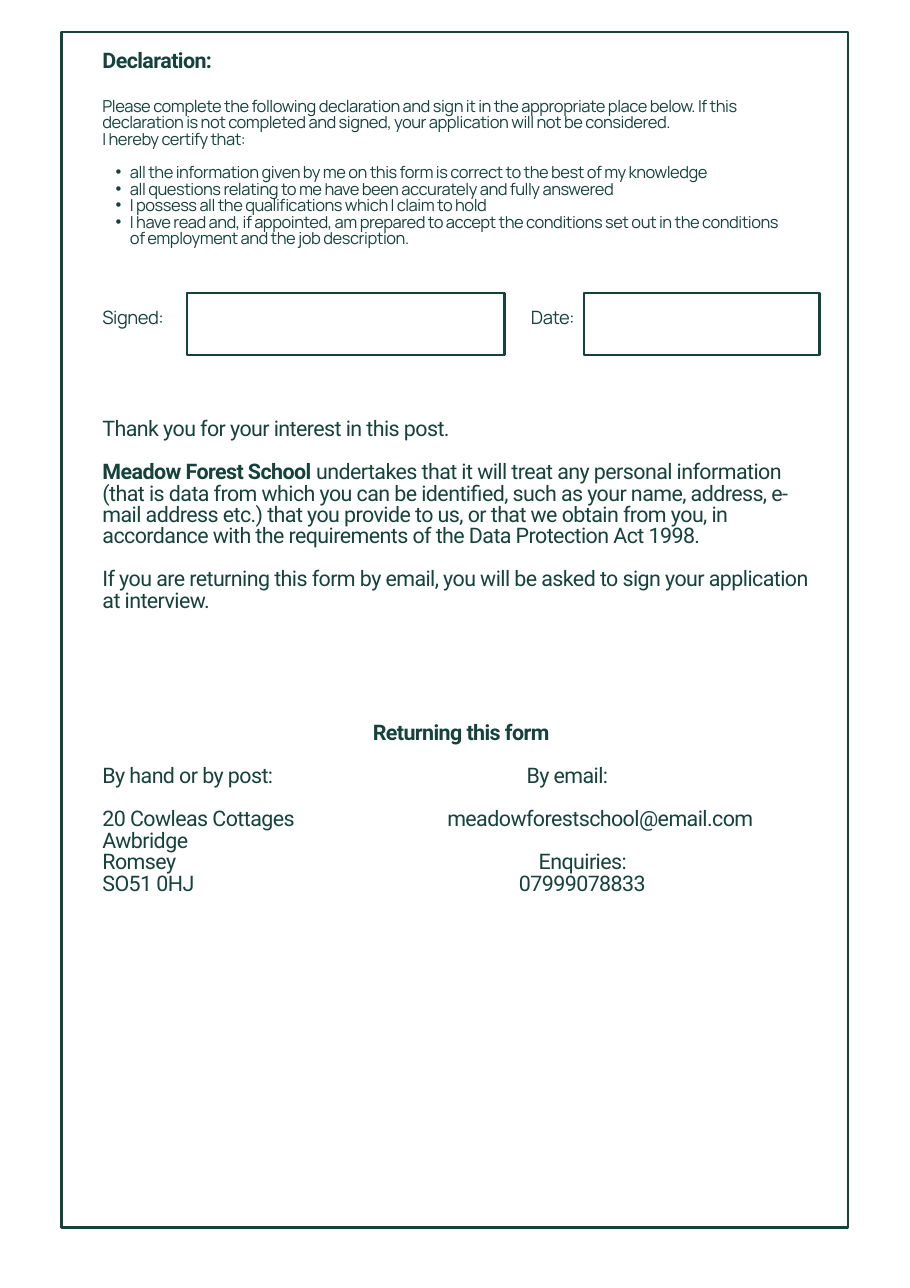
from lxml import etree
from pptx import Presentation
from pptx.dml.color import RGBColor
from pptx.enum import shapes, text
from pptx.oxml import ns
from pptx.util import Inches, Pt

COLORS = {"green": "16423C"}
LEFT = 0.93
FORM_WIDTH = 6.51

# Font, size, line spacing (points) and letter spacing (hundredths of a point)
STYLES = {
    "main": {"font": "Roboto", "size": 14, "line": 14, "tracking": -40},
    "terms": {"font": "Manrope", "size": 10.8, "line": 10.8, "tracking": -30},
    "label": {"font": "Manrope", "size": 12, "line": 12, "tracking": -30},
}
FRAME_FORMAT = {
    "margin_left": 0, "margin_right": 0, "margin_top": 0, "margin_bottom": 0,
    "word_wrap": True,
    "auto_size": text.MSO_AUTO_SIZE.NONE,
    "vertical_anchor": text.MSO_ANCHOR.TOP,
}

CERTIFIED = [
    "all the information given by me on this form is correct to the best of my knowledge",
    "all questions relating to me have been accurately and fully answered",
    "I possess all the qualifications which I claim to hold",
    "I have read and, if appointed, am prepared to accept the conditions set out in the "
    "conditions of employment and the job description.",
]


def set_attributes(target, values):
    for name, value in values.items():
        setattr(target, name, value)


def place(shape, left, top, width, height):
    box = {"left": left, "top": top, "width": width, "height": height}
    set_attributes(shape, {name: Inches(value) for name, value in box.items()})


def add_outline(slide, left, top, width, height):
    shape = slide.shapes.add_shape(
        shapes.MSO_SHAPE.RECTANGLE, *map(Inches, (left, top, width, height)))
    shape.shadow.inherit = False
    shape.fill.background()
    shape.line.color.rgb = RGBColor.from_string(COLORS["green"])
    shape.line.width = Pt(1.5)


def add_run(paragraph, words, style, bold=False):
    run = paragraph.add_run()
    run.text = words
    set_attributes(run.font, {
        "name": style["font"], "size": Pt(style["size"]), "bold": bold})
    run.font.color.rgb = RGBColor.from_string(COLORS["green"])
    run._r.get_or_add_rPr().set("spc", str(style["tracking"]))


def set_indent(paragraph, bullet, indent):
    properties = paragraph._p.get_or_add_pPr()
    properties.set("marL", str(Inches(0.25 if bullet else indent)))
    properties.set("indent", str(Inches(-0.13 if bullet else 0)))
    if bullet:
        etree.SubElement(properties, ns.qn("a:buChar"), char="•")
    else:
        etree.SubElement(properties, ns.qn("a:buNone"))


def write_paragraphs(shape, style_name, items):
    """Each item holds its runs as (words, bold) and optional formatting."""
    style = STYLES[style_name]
    frame = shape.text_frame
    set_attributes(frame, FRAME_FORMAT)
    for index, item in enumerate(items):
        paragraph = frame.add_paragraph() if index else frame.paragraphs[0]
        set_attributes(paragraph, {
            "alignment": item.get("align", text.PP_ALIGN.LEFT),
            "line_spacing": Pt(style["line"]),
            "space_before": Pt(style["line"] if item.get("gap") else 0),
            "space_after": Pt(0),
        })
        set_indent(paragraph, item.get("bullet", False), item.get("indent", 0))
        for words, bold in item["runs"]:
            add_run(paragraph, words, style, bold)


def add_text(slide, box, style_name, items):
    shape = slide.shapes.add_textbox(*map(Inches, box))
    write_paragraphs(shape, style_name, items)


def line(words, bold=False, **formatting):
    return {"runs": [(words, bold)], **formatting}


def main():
    presentation = Presentation()
    presentation.slide_width = Inches(8.26)
    presentation.slide_height = Inches(11.69)
    slide = presentation.slides.add_slide(presentation.slide_layouts[1])

    # Page border
    add_outline(slide, 0.56, 0.29, 7.14, 10.85)

    # Declaration
    title = slide.shapes.title
    place(title, LEFT, 0.47, 4.04, 0.24)
    write_paragraphs(title, "main", [line("Declaration:", True)])

    terms = slide.placeholders[1]
    place(terms, LEFT, 0.9, 6.2, 1.48)
    write_paragraphs(terms, "terms", [
        line("Please complete the following declaration and sign it in the appropriate "
             "place below. If this declaration is not completed and signed, your "
             "application will not be considered."),
        line("I hereby certify that:"),
        *(line(words, bullet=True, gap=index == 0)
          for index, words in enumerate(CERTIFIED)),
    ])

    # Signature and date fields
    for label, label_left, label_width, field_left, field_width in (
            ("Signed:", LEFT, 0.7, 1.7, 2.88), ("Date:", 4.82, 0.47, 5.3, 2.14)):
        add_text(slide, (label_left, 2.81, label_width, 0.19), "label", [line(label)])
        add_outline(slide, field_left, 2.66, field_width, 0.56)

    # Data protection
    add_text(slide, (LEFT, 3.81, FORM_WIDTH, 1.74), "main", [
        line("Thank you for your interest in this post."),
        {"gap": True, "runs": [
            ("Meadow Forest School ", True),
            ("undertakes that it will treat any personal information (that is data from "
             "which you can be identified, such as your name, address, e-mail address "
             "etc.) that you provide to us, or that we obtain from you, in accordance "
             "with the requirements of the Data Protection Act 1998.", False)]},
        line("If you are returning this form by email, you will be asked to sign your "
             "application at interview.", gap=True),
    ])

    # Return details: heading, postal column, email column
    add_text(slide, (LEFT, 6.57, FORM_WIDTH, 0.2), "main", [
        line("Returning this form", True, align=text.PP_ALIGN.CENTER)])
    add_text(slide, (LEFT, 6.96, 2.8, 1.16), "main", [
        line("By hand or by post:"),
        line("20 Cowleas Cottages", gap=True),
        line("Awbridge"),
        line("Romsey"),
        line("SO51 0HJ"),
    ])
    add_text(slide, (4.06, 6.96, 3.38, 1.16), "main", [
        line("By email:", indent=0.72),
        line("meadowforestschool@email.com", gap=True),
        line("Enquiries:", gap=True, indent=0.83),
        line("07999078833", indent=0.65),
    ])

    presentation.save("out.pptx")


if __name__ == "__main__":
    main()
